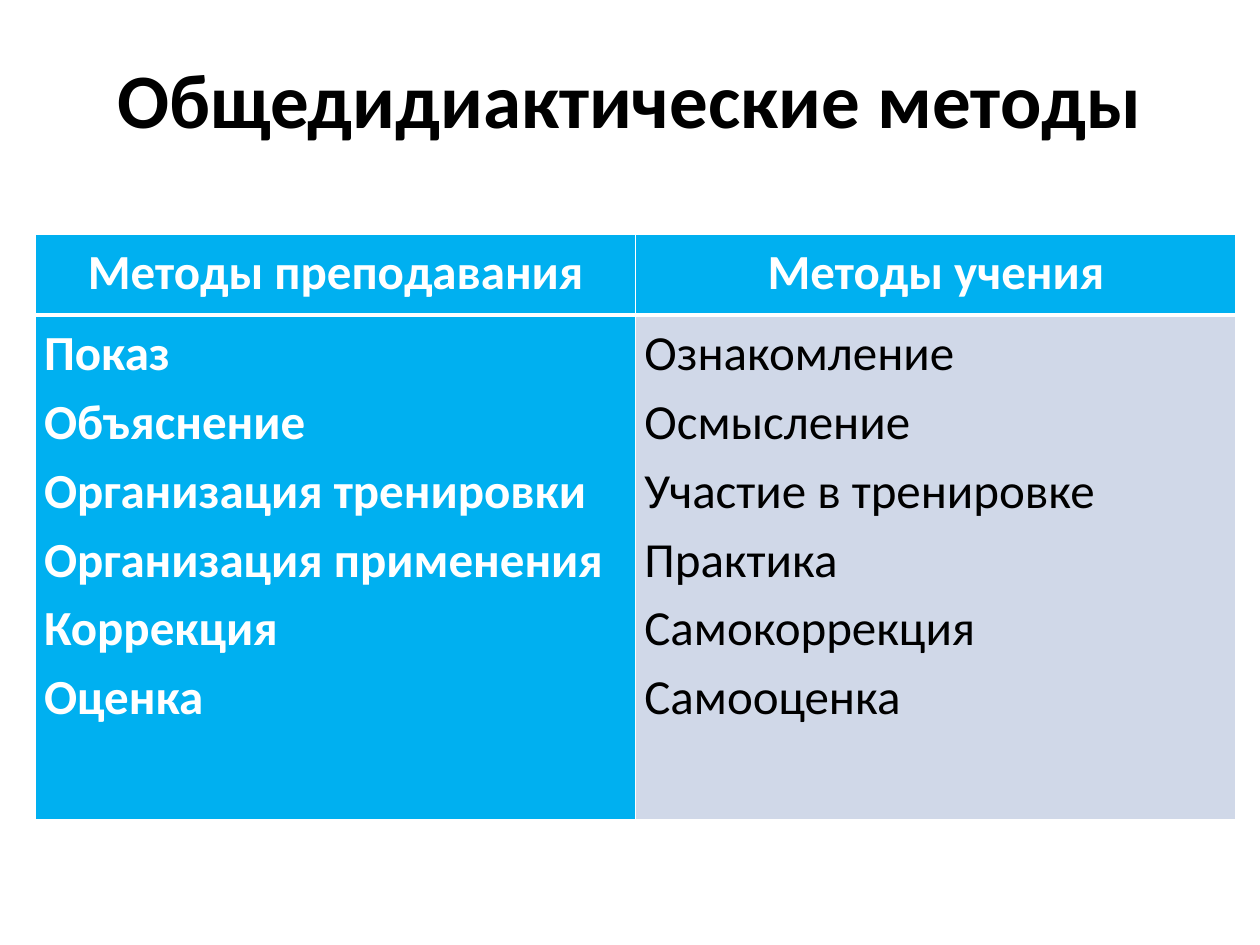
from dataclasses import dataclass

from lxml.etree import SubElement
from pptx import Presentation
from pptx.dml.color import RGBColor
from pptx.enum.text import MSO_ANCHOR, PP_ALIGN
from pptx.oxml.ns import qn
from pptx.util import Inches, Pt


@dataclass(frozen=True)
class Theme:
    font: str = "Calibri"
    black: str = "000000"
    white: str = "FFFFFF"
    accent: str = "00B0F0"
    pale: str = "D0D8E8"
    title_size: int = 44
    table_size: int = 28
    line_spacing: float = 1.15
    thin_border: int = 1
    thick_border: int = 3


THEME = Theme()
TITLE = "Общедидиактические методы"
HEADERS = ["Методы преподавания", "Методы учения"]
METHODS = [
    [
        "Показ",
        "Объяснение",
        "Организация тренировки",
        "Организация применения",
        "Коррекция",
        "Оценка",
    ],
    [
        "Ознакомление",
        "Осмысление",
        "Участие в тренировке",
        "Практика",
        "Самокоррекция",
        "Самооценка",
    ],
]


def set_values(target, values):
    for name, value in values.items():
        setattr(target, name, value)


def write_lines(frame, lines, size, color, bold, paragraph_format):
    for index, line in enumerate(lines):
        para = frame.paragraphs[0] if index == 0 else frame.add_paragraph()
        set_values(para, paragraph_format)
        span = para.add_run()
        span.text = line
        set_values(span.font, {"name": THEME.font, "size": Pt(size), "bold": bold})
        span.font.color.rgb = RGBColor.from_string(color)


def set_borders(cell, widths):
    properties = cell._tc.get_or_add_tcPr()
    for side, width in widths.items():
        line = SubElement(properties, qn(f"a:ln{side}"), w=str(Pt(width)))
        fill = SubElement(line, qn("a:solidFill"))
        SubElement(fill, qn("a:srgbClr"), val=THEME.white)


def fill_cell(cell, lines, fill, color, bold, align, widths):
    set_borders(cell, widths)
    cell.fill.solid()
    cell.fill.fore_color.rgb = RGBColor.from_string(fill)
    margins = {
        "margin_left": Inches(0.07),
        "margin_right": Inches(0.07),
        "margin_top": 0,
        "margin_bottom": 0,
        "vertical_anchor": MSO_ANCHOR.TOP,
    }
    set_values(cell, margins)
    paragraph_format = {"alignment": align, "line_spacing": THEME.line_spacing}
    write_lines(cell.text_frame, lines, THEME.table_size, color, bold, paragraph_format)


def place_title(page, left, top, width, height):
    title = page.shapes.title
    set_values(title, {"left": left, "top": top, "width": width, "height": height})
    set_values(title.text_frame, {"word_wrap": True, "vertical_anchor": MSO_ANCHOR.MIDDLE})
    write_lines(
        title.text_frame, [TITLE], THEME.title_size, THEME.black, True,
        {"alignment": PP_ALIGN.CENTER},
    )


def place_methods(page, left, top, width, height):
    table = page.shapes.add_table(2, len(HEADERS), left, top, width, height).table
    header_height = Inches(0.64)
    table.rows[0].height = header_height
    table.rows[1].height = height - header_height
    thin, thick = THEME.thin_border, THEME.thick_border
    header_borders = {"L": thin, "R": thin, "T": thin, "B": thick}
    body_borders = {"L": thin, "R": thin, "T": thick, "B": thin}
    body_styles = [(THEME.accent, THEME.white, True), (THEME.pale, THEME.black, False)]
    for column, (header, lines, style) in enumerate(zip(HEADERS, METHODS, body_styles)):
        fill_cell(
            table.cell(0, column), [header], THEME.accent, THEME.white, True,
            PP_ALIGN.CENTER, header_borders,
        )
        fill_cell(table.cell(1, column), lines, *style, PP_ALIGN.JUSTIFY, body_borders)


def main():
    deck = Presentation()
    set_values(deck, {"slide_width": Inches(10), "slide_height": Inches(7.5)})
    page = deck.slides.add_slide(deck.slide_layouts[5])
    place_title(page, 0, 0, Inches(10), Inches(1.55))
    place_methods(page, Inches(0.28), Inches(1.86), Inches(9.53), Inches(4.65))
    deck.save("out.pptx")


if __name__ == "__main__":
    main()
